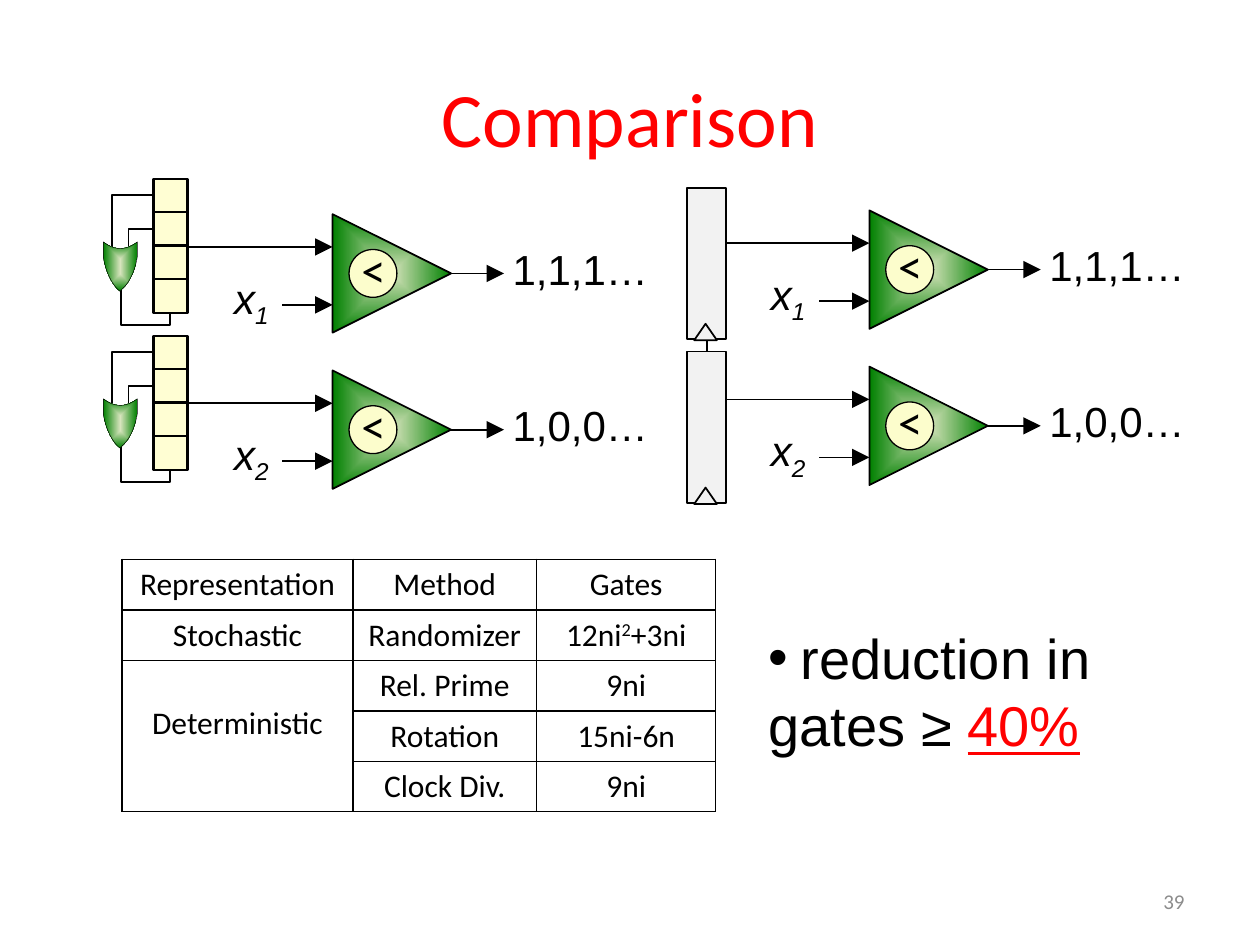
from lxml import etree
from pptx import Presentation, util as u
from pptx.dml.color import RGBColor
from pptx.enum import shapes, text
from pptx.oxml import parse_xml
from pptx.oxml.ns import nsdecls, qn

# Content
TITLE = "Comparison"
PAGE = "39"
ROWS = [
    ("Representation", "Method", "Gates"),
    ("Stochastic", "Randomizer", ("12ni", "2", "+3ni")),
    ("Deterministic", "Rel. Prime", "9ni"),
    ("", "Rotation", "15ni-6n"),
    ("", "Clock Div.", "9ni"),
]
COL_WIDTHS = (1.83, 1.46, 1.42)
ROW_HEIGHT = 0.4
STREAMS = [("1", "1,1,1…"), ("2", "1,0,0…")]
C = {"black": "000000", "red": "FF0000", "grey": "8C8C8C", "light": "D7E4BD",
     "green": "008000", "disc": "FCFDCC", "cell": "FFFED3", "register": "F2F2F2"}

# Geometry: each circuit has two comparators, one below the other
SIDE = 0.94
STEP = 1.24
LFSR, COUNTER = (2.64, 1.70), (6.90, 1.67)  # top left of the first comparator
M = shapes.MSO_SHAPE

prs = Presentation()
prs.slide_width, prs.slide_height = u.Inches(10), u.Inches(7.5)
s = prs.slides.add_slide(prs.slide_layouts[1])


def rgb(name):
    return RGBColor.from_string(C[name])


def place(sp, *box):
    sp.left, sp.top, sp.width, sp.height = (u.Inches(v) for v in box)


def add_run(p, words, size, font="Calibri", color="black", base=0, italic=None):
    r = p.add_run()
    r.text = words
    f = r.font
    f.size, f.name, f.italic = u.Pt(size), font, italic
    f.color.rgb = rgb(color)
    if base:
        r._r.get_or_add_rPr().set("baseline", str(base * 1000))
    return r


def label(box, runs, wrap=True, align=None, **style):
    """Text box; runs are (words, baseline shift in percent)."""
    tf = s.shapes.add_textbox(*(u.Inches(v) for v in box)).text_frame
    tf.word_wrap = wrap
    p = tf.paragraphs[0]
    p.alignment = align
    for words, base in runs:
        add_run(p, words, base=base, **style)
    return tf


def paint(sp, fill=None, width=1):
    """Fill is a colour name, "gradient" or None."""
    sp.shadow.inherit = False
    if fill == "gradient":
        sp.fill.gradient()
        for stop, name in zip(sp.fill.gradient_stops, ("light", "green")):
            stop.color.rgb = rgb(name)
        grad = sp._element.spPr.find(qn("a:gradFill"))
        grad.replace(grad.find(qn("a:lin")), parse_xml(
            f'<a:path {nsdecls("a")} path="rect">'
            '<a:fillToRect l="50000" t="50000" r="50000" b="50000"/></a:path>'))
    elif fill:
        sp.fill.solid()
        sp.fill.fore_color.rgb = rgb(fill)
    else:
        sp.fill.background()
    if width:
        sp.line.color.rgb = rgb("black")
        sp.line.width = u.Pt(width)
    else:
        sp.line.fill.background()


def shape(kind, box, fill, width=1):
    sp = s.shapes.add_shape(kind, *(u.Inches(v) for v in box))
    paint(sp, fill, width)
    return sp


def wire(x1, y1, x2, y2, arrow=True):
    cn = s.shapes.add_connector(shapes.MSO_CONNECTOR.STRAIGHT,
                                *(u.Inches(v) for v in (x1, y1, x2, y2)))
    cn.line.color.rgb = rgb("black")
    cn.line.width = u.Pt(1)
    if arrow:
        etree.SubElement(cn.line._get_or_add_ln(), qn("a:tailEnd"),
                         type="triangle", w="lg", len="lg")
    etree.SubElement(cn._element.spPr, qn("a:effectLst"))


def outline(points, fill=None, width=1, close=False):
    pts = [(u.Inches(x), u.Inches(y)) for x, y in points]
    fb = s.shapes.build_freeform(*pts[0])
    fb.add_line_segments(pts[1:], close=close)
    paint(fb.convert_to_shape(), fill, width)


def curve(a, b, c, d, n=12):
    return [tuple((1 - t) ** 3 * i + 3 * (1 - t) ** 2 * t * j
                  + 3 * (1 - t) * t * t * k + t ** 3 * m
                  for i, j, k, m in zip(a, b, c, d))
            for t in (q / n for q in range(n + 1))]


def comparator(x, y, source, index, result):
    wire(source, y + 0.26, x, y + 0.26)
    wire(x - 0.4, y + 0.72, x, y + 0.72)
    wire(x + SIDE, y + 0.47, x + 1.36, y + 0.47)
    shape(M.ISOSCELES_TRIANGLE, (x, y, SIDE, SIDE), "gradient").rotation = 90
    shape(M.OVAL, (x + 0.13, y + 0.28, 0.38, 0.38), "disc", 0.75)
    label((x + 0.13, y + 0.15, 0.49, 0.57), [("<", 0)], size=28)
    label((x - 0.88, y + 0.41, 0.56, 0.5), [("x", 0), (index, -25)],
          size=24, font="Arial", italic=True)
    label((x + 1.33, y + 0.18, 1.29, 0.5), [(result, 0)], wrap=False,
          size=24, font="Arial")


def shift_register(y):
    """Four cells with two taps fed back through an OR-type gate."""
    for i in range(4):
        shape(M.RECTANGLE, (1.22, y + i * 0.265, 0.27, 0.27), "cell", 1.38)
    outline([(1.22, y + 0.13), (0.89, y + 0.13), (0.89, y + 0.6)])
    outline([(1.22, y + 0.4), (1.02, y + 0.4), (1.02, y + 0.6)])
    outline([(0.96, y + 0.85), (0.96, y + 1.16), (1.35, y + 1.16), (1.35, y + 1.06)])
    left = curve((0.95, 0.89), (0.89, 0.84), (0.84, 0.74), (0.82, 0.62))
    top = curve((0.82, 0.5), (0.91, 0.57), (1.0, 0.57), (1.09, 0.5))
    right = curve((1.09, 0.62), (1.07, 0.74), (1.02, 0.84), (0.95, 0.89))
    outline([(gx, y + gy) for gx, gy in left + top + right], "gradient", 0.25, True)


def counter(y):
    shape(M.RECTANGLE, (5.45, y, 0.31, 1.2), "register")
    shape(M.ISOSCELES_TRIANGLE, (5.51, y + 1.08, 0.18, 0.13), "register")


# Title
place(s.shapes.title, 0.5, 0.3, 9, 1.25)
p = s.shapes.title.text_frame.paragraphs[0]
p.alignment = text.PP_ALIGN.CENTER
add_run(p, TITLE, 44, color="red")

# Circuits
wire(5.61, 2.94, 5.61, 2.53, arrow=False)
for i, (index, result) in enumerate(STREAMS):
    shift_register(1.42 + i * 1.245)
    counter(1.49 + i * 1.3)
    for (x, y), source in ((LFSR, 1.49), (COUNTER, 5.76)):
        comparator(x, y + i * STEP, source, index, result)

# Table of gate counts
frame = s.shapes.add_table(len(ROWS), len(COL_WIDTHS), u.Inches(0.97), u.Inches(4.44),
                           u.Inches(sum(COL_WIDTHS)), u.Inches(ROW_HEIGHT * len(ROWS)))
table = frame.table
table.first_row = table.horz_banding = False
for col, width in zip(table.columns, COL_WIDTHS):
    col.width = u.Inches(width)
for i, row in enumerate(ROWS):
    for j, words in enumerate(row):
        cell = table.cell(i, j)
        p = cell.text_frame.paragraphs[0]
        p.alignment = text.PP_ALIGN.CENTER
        parts = (words,) if isinstance(words, str) else words
        for k, part in enumerate(parts):
            if part:
                add_run(p, part, 18, base=30 * (k % 2))
        cell.fill.background()
        tcPr = cell._tc.get_or_add_tcPr()
        for n, side in enumerate("LRTB"):
            tcPr.insert(n, parse_xml(
                f'<a:ln{side} {nsdecls("a")} w="12700"><a:solidFill>'
                f'<a:srgbClr val="{C["black"]}"/></a:solidFill></a:ln{side}>'))
table.cell(2, 0).merge(table.cell(4, 0))
table.cell(2, 0).margin_top = u.Inches(0.35)

# Conclusion
body = s.placeholders[1]
place(body, 6, 4.9, 3.5, 1.18)
tf = body.text_frame
tf.auto_size = text.MSO_AUTO_SIZE.NONE
p = tf.paragraphs[0]
p.space_before = u.Pt(0)
pPr = p._p.get_or_add_pPr()
pPr.set("marL", "0")
pPr.set("indent", "0")
etree.SubElement(pPr, qn("a:buFont"), typeface="Arial")
etree.SubElement(pPr, qn("a:buChar"), char="•")
add_run(p, " ", 32)
add_run(p, "reduction in gates ≥ ", 32, "Arial")
add_run(p, "40%", 32, "Arial", "red").font.underline = True

# Slide number
tf = label((7.17, 6.95, 2.33, 0.4), [(PAGE, 0)], align=text.PP_ALIGN.RIGHT,
           size=12, color="grey")
tf.vertical_anchor = text.MSO_ANCHOR.MIDDLE

prs.save("out.pptx")
